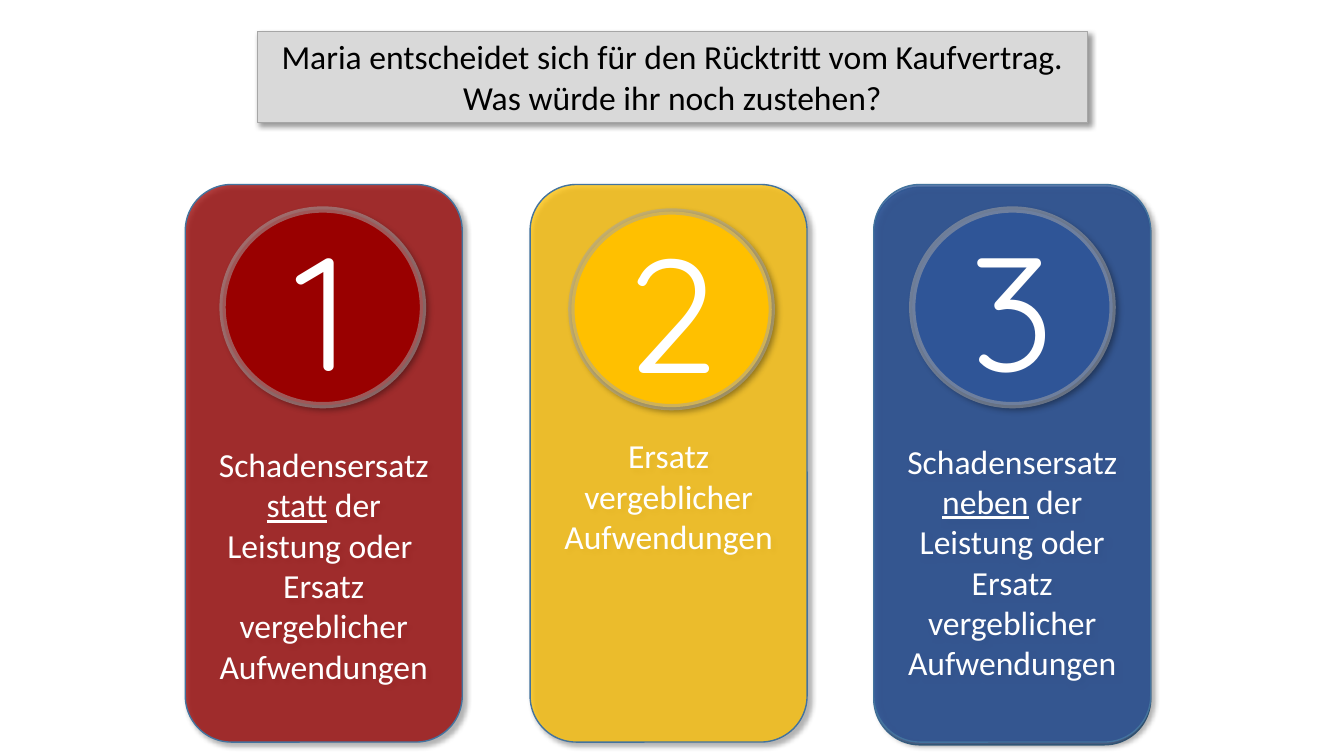
from dataclasses import dataclass

from lxml.etree import SubElement
from pptx import Presentation
from pptx.dml.color import RGBColor
from pptx.enum.shapes import MSO_SHAPE as Preset
from pptx.enum.text import MSO_ANCHOR as Anchor, MSO_AUTO_SIZE as AutoSize, PP_ALIGN as Align
from pptx.oxml.ns import qn
from pptx.util import Cm, Pt


@dataclass(frozen=True)
class Theme:
    red: str = "990000"
    yellow: str = "FFC000"
    blue: str = "2F5597"
    card_line: str = "43739E"
    grey_line: str = "A6A6A6"
    heading_fill: str = "D9D9D9"
    black: str = "000000"
    white: str = "FFFFFF"
    body_font: str = "Calibri"
    number_font: str = "Quicksand"
    body_size: int = 24
    number_size: int = 115


class SlideBuilder:
    def __init__(self, slide, theme):
        self.slide = slide
        self.theme = theme

    def panel(self, preset, box, fill, line, line_width, fill_alpha=100, line_alpha=100,
              shadow=True):
        panel = self.slide.shapes.add_shape(preset, *map(Cm, box))
        panel.shadow.inherit = False
        panel.fill.solid()
        panel.fill.fore_color.rgb = RGBColor.from_string(fill)
        panel.line.color.rgb = RGBColor.from_string(line)
        panel.line.width = Pt(line_width)
        properties = panel.element.spPr
        outline = properties.find(qn("a:ln"))
        for owner, alpha in ((properties, fill_alpha), (outline, line_alpha)):
            if alpha < 100:
                self.set_alpha(owner.find(qn("a:solidFill"))[0], alpha)
        if shadow:
            self.add_shadow(properties.find(qn("a:effectLst")))
        return panel

    def set_alpha(self, color, percent):
        SubElement(color, qn("a:alpha"), val=str(percent * 1000))

    def add_shadow(self, effects):
        outer = SubElement(effects, qn("a:outerShdw"), blurRad=str(Pt(4)), dist=str(Pt(3)),
                           dir=str(45 * 60000), algn="tl", rotWithShape="0")
        self.set_alpha(SubElement(outer, qn("a:srgbClr"), val=self.theme.black), 40)

    def add_text(self, panel, paragraphs, font, size, color, anchor):
        """Add centred paragraphs; _word_ is underlined and a newline breaks the line."""
        frame = panel.text_frame
        frame.word_wrap = True
        frame.vertical_anchor = anchor
        for index, text in enumerate(paragraphs):
            paragraph = frame.add_paragraph() if index else frame.paragraphs[0]
            paragraph.alignment = Align.CENTER
            for part_index, part in enumerate(text.split("_")):
                for line_index, line in enumerate(part.split("\n")):
                    if line_index:
                        paragraph.add_line_break()
                    run = paragraph.add_run()
                    run.text = line
                    run.font.name = font
                    run.font.size = Pt(size)
                    run.font.color.rgb = RGBColor.from_string(color)
                    if part_index % 2:
                        run.font.underline = True

    def heading(self, box, paragraphs):
        theme = self.theme
        heading = self.panel(Preset.RECTANGLE, box, theme.heading_fill, theme.grey_line, 0.75)
        self.add_text(heading, paragraphs, theme.body_font, theme.body_size, theme.black,
                      Anchor.TOP)
        heading.text_frame.auto_size = AutoSize.SHAPE_TO_FIT_TEXT

    def card(self, box, color, shadow=True):
        return self.panel(Preset.ROUNDED_RECTANGLE, box, color, self.theme.card_line, 1,
                          fill_alpha=75, shadow=shadow)

    def claim(self, box, color, paragraphs, text_top):
        theme = self.theme
        card = self.card(box, color)
        self.add_text(card, paragraphs, theme.body_font, theme.body_size, theme.white,
                      Anchor.TOP)
        card.text_frame.margin_top = Cm(text_top)

    def number(self, box, color, number):
        theme = self.theme
        circle = self.panel(Preset.OVAL, box, color, theme.grey_line, 4.5, line_alpha=53)
        self.add_text(circle, [str(number)], theme.number_font, theme.number_size, theme.white,
                      Anchor.MIDDLE)


def main():
    deck = Presentation()
    deck.slide_width, deck.slide_height = Cm(33.87), Cm(19.05)
    theme = Theme()
    builder = SlideBuilder(deck.slides.add_slide(deck.slide_layouts[6]), theme)

    card_top, card_size = 4.65, (6.98, 14.05)
    circle_size = (5.05, 4.93)
    # card left, circle left, circle top, text top, colour, wording
    claims = [
        (4.67, 5.61, 5.28, 6.2, theme.red,
         ["Schadensersatz _statt_ der Leistung oder ", "Ersatz vergeblicher\nAufwendungen"]),
        (13.36, 14.4, 5.33, 5.98, theme.yellow, ["Ersatz vergeblicher\nAufwendungen"]),
        (22.02, 22.99, 5.28, 6.11, theme.blue,
         ["Schadensersatz _neben_ der Leistung oder Ersatz vergeblicher\nAufwendungen"]),
    ]

    builder.card((claims[-1][0], card_top + 0.07, *card_size), theme.blue, shadow=False)
    for number, claim in enumerate(claims, start=1):
        card_left, circle_left, circle_top, text_top, color, wording = claim
        builder.claim((card_left, card_top, *card_size), color, wording, text_top)
        builder.number((circle_left, circle_top, *circle_size), color, number)

    builder.heading((6.48, 0.79, 20.93, 2.31),
                    ["Maria entscheidet sich für den Rücktritt vom Kaufvertrag.",
                     "Was würde ihr noch zustehen?"])
    deck.save("out.pptx")


if __name__ == "__main__":
    main()
